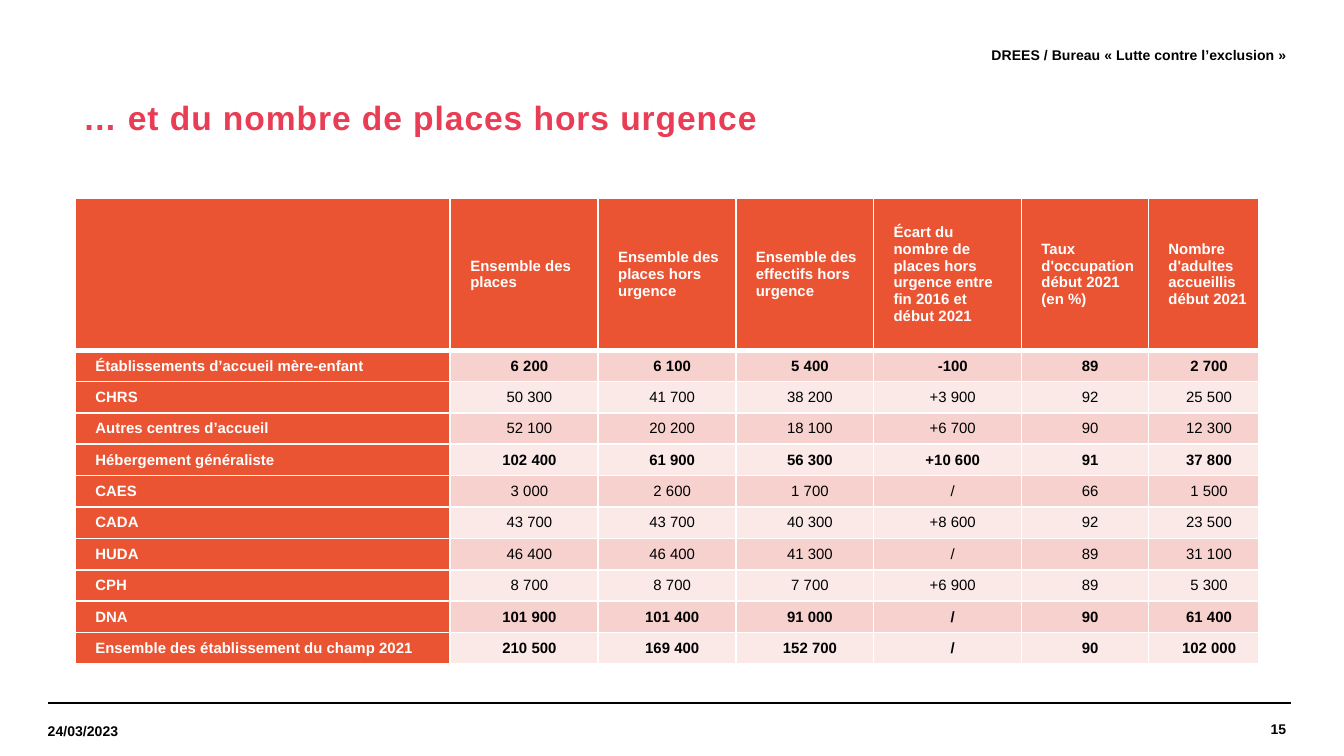
from dataclasses import dataclass

from lxml import etree
from pptx import Presentation, util as u
from pptx.dml.color import RGBColor
from pptx.enum import shapes, text
from pptx.oxml import ns

PX = u.Inches(1) // 200  # 200 px to the inch
LEFT, RIGHT = text.PP_ALIGN.LEFT, text.PP_ALIGN.RIGHT
CENTER = text.PP_ALIGN.CENTER


@dataclass(frozen=True)
class Theme:
    font: str = "Arial"
    ink: str = "000000"
    white: str = "FFFFFF"
    title: str = "E83D54"
    head: str = "EA5433"
    bands: tuple = ("F7D1CE", "FBE9E8")
    small: float = 7.5
    cell: float = 8
    big: float = 18
    rule: float = 0.8
    grid: float = 1
    thick: float = 3


T = Theme()

HEADS = (
    "",
    "Ensemble des places",
    "Ensemble des places hors urgence",
    "Ensemble des effectifs hors urgence",
    "Écart du nombre de places hors urgence entre fin 2016 et début 2021",
    "Taux d'occupation début 2021 (en %)",
    "Nombre d'adultes accueillis début 2021",
)
ROWS = (
    ("Établissements d’accueil mère-enfant", "6 200", "6 100", "5 400", "-100", "89", "2 700"),
    ("CHRS", "50 300", "41 700", "38 200", "+3 900", "92", "25 500"),
    ("Autres centres d’accueil", "52 100", "20 200", "18 100", "+6 700", "90", "12 300"),
    ("Hébergement généraliste", "102 400", "61 900", "56 300", "+10 600", "91", "37 800"),
    ("CAES", "3 000", "2 600", "1 700", "/", "66", "1 500"),
    ("CADA", "43 700", "43 700", "40 300", "+8 600", "92", "23 500"),
    ("HUDA", "46 400", "46 400", "41 300", "/", "89", "31 100"),
    ("CPH", "8 700", "8 700", "7 700", "+6 900", "89", "5 300"),
    ("DNA", "101 900", "101 400", "91 000", "/", "90", "61 400"),
    ("Ensemble des établissement du champ 2021", "210 500", "169 400", "152 700", "/", "90", "102 000"),
)
TOTALS = (1, 4, 9, 10)
COLS = (558, 220, 205, 205, 220, 189, 165)


def style(par, size, color, bold=True, align=LEFT, indent=0):
    par.alignment = align
    props = par._p.get_or_add_pPr()
    props.set("marL", str(indent * PX))
    props.set("indent", "0")
    for run in par.runs:
        font = run.font
        font.name, font.size, font.bold = T.font, u.Pt(size), bold
        font.color.rgb = RGBColor.from_string(color)


def inset(item, side, top):
    item.margin_left = item.margin_right = side * PX
    item.margin_top = item.margin_bottom = top * PX


def label(slide, box, words, size, color, align=LEFT, pad=(0, 0), indent=0):
    frame = slide.shapes.add_textbox(*(n * PX for n in box)).text_frame
    frame.word_wrap = True
    frame.vertical_anchor = text.MSO_ANCHOR.MIDDLE
    inset(frame, *pad)
    frame.text = words
    par = frame.paragraphs[0]
    style(par, size, color, align=align, indent=indent)
    return par


def title(slide, box, words):
    par = label(slide, box, words, T.big, T.title, pad=(20, 10), indent=4)
    par.line_spacing = 0.9
    par.runs[0]._r.get_or_add_rPr().set("spc", "50")


def footer(slide, box, date, page):
    x, y, w, h = box
    for shift in (0, 7):
        line = slide.shapes.add_connector(
            shapes.MSO_CONNECTOR.STRAIGHT,
            (x + shift) * PX, y * PX, (x + shift + w) * PX, y * PX)
        line.line.color.rgb = RGBColor.from_string(T.ink)
        line.line.width = u.Pt(T.rule)
        etree.SubElement(line._element.spPr, ns.qn("a:effectLst"))
    label(slide, (x, y + 4, 256, h - 2), date, T.small, T.ink)
    label(slide, (x + w - 296, y, 296, h), page, T.small, T.ink, RIGHT)


def border(cell, row):
    props = cell._tc.get_or_add_tcPr()
    for side in "LRTB":
        # The header is set off by a thicker line, shared with the row below
        thick = (row, side) in ((0, "B"), (1, "T"))
        line = etree.SubElement(props, ns.qn(f"a:ln{side}"))
        line.set("w", str(u.Pt(T.thick if thick else T.grid)))
        fill = etree.SubElement(line, ns.qn("a:solidFill"))
        etree.SubElement(fill, ns.qn("a:srgbClr")).set("val", T.white)


def fill_cell(cell, words, row, col):
    head = row == 0 or col == 0
    border(cell, row)
    cell.fill.solid()
    color = T.head if head else T.bands[(row - 1) % 2]
    cell.fill.fore_color.rgb = RGBColor.from_string(color)
    cell.vertical_anchor = text.MSO_ANCHOR.MIDDLE
    inset(cell, 14, 7)
    cell.text = words
    style(cell.text_frame.paragraphs[0], T.cell, T.white if head else T.ink,
          head or row in TOTALS, LEFT if head else CENTER, 16)


def places(slide, box):
    """Table of places by type of centre."""
    data = (HEADS, *ROWS)
    grid = slide.shapes.add_table(
        len(data), len(COLS), *(n * PX for n in box)).table
    grid.first_row = grid.horz_banding = False
    top = 226
    for col, width in zip(grid.columns, COLS):
        col.width = width * PX
    for i, line in enumerate(grid.rows):
        line.height = (box[3] - top) * PX // len(ROWS) if i else top * PX
    for i, line in enumerate(data):
        for j, words in enumerate(line):
            fill_cell(grid.cell(i, j), words, i, j)


def main():
    deck = Presentation()
    deck.slide_width, deck.slide_height = 2000 * PX, 1125 * PX
    slide = deck.slides.add_slide(deck.slide_layouts[6])
    footer(slide, (71, 1046, 1843, 78), "24/03/2023", "15")
    label(slide, (628, 42, 1286, 78),
          "DREES / Bureau « Lutte contre l’exclusion »", T.small, T.ink, RIGHT)
    title(slide, (100, 119, 1842, 118), "… et du nombre de places hors urgence")
    places(slide, (112, 295, sum(COLS), 693))
    deck.save("out.pptx")


if __name__ == "__main__":
    main()
